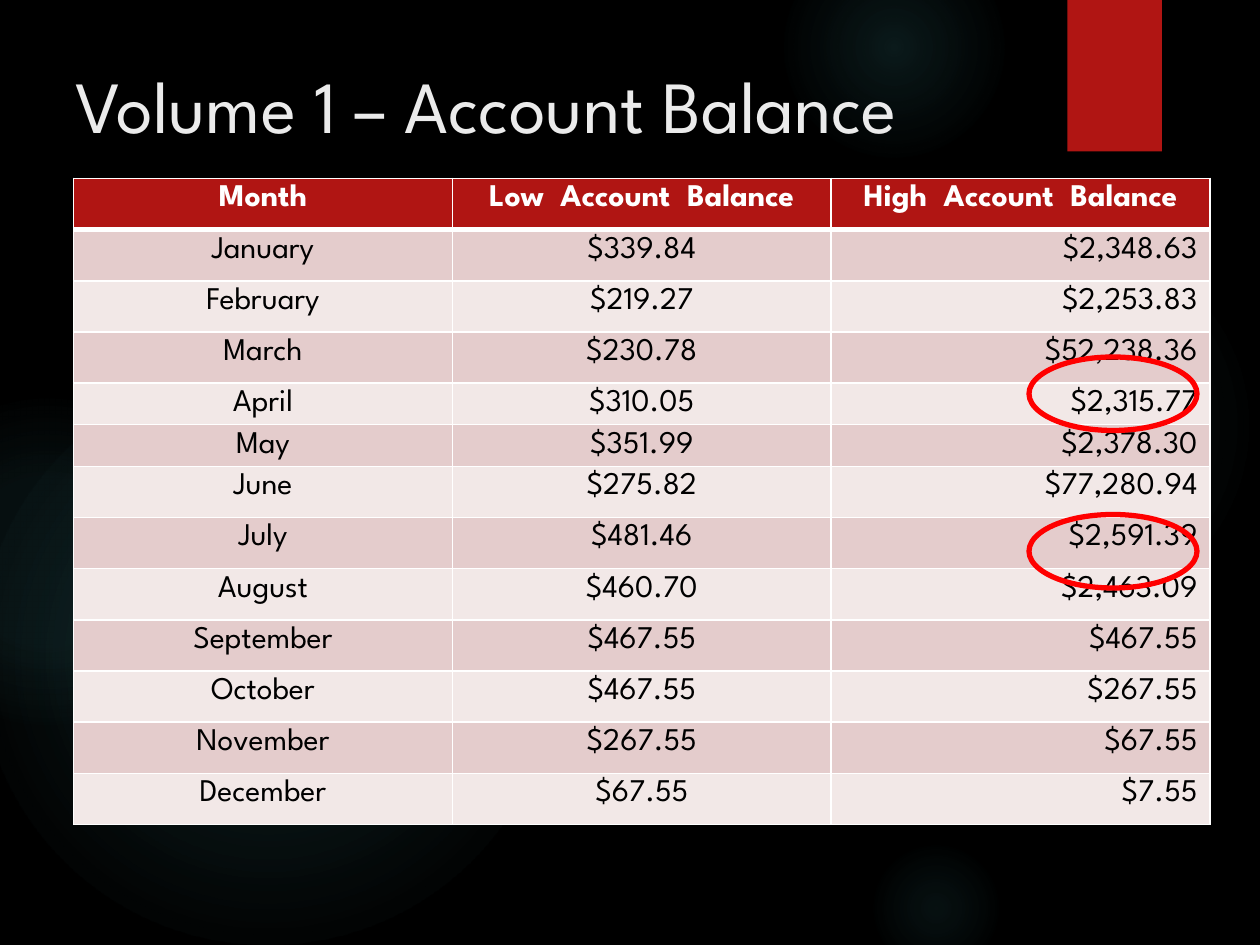
from lxml import etree
from pptx import Presentation
from pptx.dml.color import RGBColor
from pptx.enum import shapes, text
from pptx.oxml import ns
from pptx.util import Pt

FONT = "League Spartan"
COLORS = {
    "background": "000000", "glow": "50B9C1", "accent": "B01513",
    "title": "EBEBEB", "white": "FFFFFF", "body": "000000",
    "band_dark": "E4CCCC", "band_light": "F2E8E7", "marker": "FF0000",
}
GLOWS = [
    ((496, 132, 222, 222), [(0, 7), (36, 6), (69, 0)]),
    ((448, -36, 126, 126), [(0, 14), (36, 7), (73, 0)]),
    ((496, 480, 78, 78), [(0, 9), (36, 5), (66, 0)]),
    ((-12, 210, 330, 330), [(0, 11), (36, 10), (75, 0)]),
    ((-66, 228, 186, 186), [(0, 8), (36, 8), (72, 0)]),
]
BALANCES = [
    ("Month", "Low  Account  Balance", "High  Account  Balance"),
    ("January", "$339.84", "$2,348.63"),
    ("February", "$219.27", "$2,253.83"),
    ("March", "$230.78", "$52,238.36"),
    ("April", "$310.05", "$2,315.77"),
    ("May", "$351.99", "$2,378.30"),
    ("June", "$275.82", "$77,280.94"),
    ("July", "$481.46", "$2,591.39"),
    ("August", "$460.70", "$2,463.09"),
    ("September", "$467.55", "$467.55"),
    ("October", "$467.55", "$267.55"),
    ("November", "$267.55", "$67.55"),
    ("December", "$67.55", "$7.55"),
]
ROW_HEIGHT, SHORT_ROW_HEIGHT = 29.25, 23.75
SHORT_MONTHS = {"April", "May"}


def rgb(name):
    return RGBColor.from_string(COLORS[name])


def add_element(parent, tag, **attributes):
    values = {key: str(value) for key, value in attributes.items()}
    return etree.SubElement(parent, ns.qn(tag), values)


def add_plain_shape(slide, kind, box):
    shape = slide.shapes.add_shape(kind, *(Pt(value) for value in box))
    shape.shadow.inherit = False
    shape.line.fill.background()
    return shape


def format_run(run, size, color, bold=False):
    run.font.name = FONT
    run.font.size = Pt(size)
    run.font.bold = bold
    run.font.color.rgb = rgb(color)


def add_glow(slide, box, stops):
    glow = add_plain_shape(slide, shapes.MSO_SHAPE.OVAL, box)
    glow.fill.gradient()
    gradient = glow.fill._xPr.find(ns.qn("a:gradFill"))
    for child in list(gradient):
        gradient.remove(child)
    stop_list = add_element(gradient, "a:gsLst")
    for position, opacity in stops:
        stop = add_element(stop_list, "a:gs", pos=position * 1000)
        color = add_element(stop, "a:srgbClr", val=COLORS["glow"])
        add_element(color, "a:alpha", val=opacity * 1000)
    circle = add_element(gradient, "a:path", path="circle")
    add_element(circle, "a:fillToRect", l=50000, t=50000, r=50000, b=50000)


def add_backdrop(slide):
    slide.background.fill.solid()
    slide.background.fill.fore_color.rgb = rgb("background")
    for box, stops in GLOWS:
        add_glow(slide, box, stops)
    ribbon = add_plain_shape(slide, shapes.MSO_SHAPE.RECTANGLE, (610, 0, 54, 86.5))
    ribbon.fill.solid()
    ribbon.fill.fore_color.rgb = rgb("accent")


def place_title(slide, box, wording):
    title = slide.shapes.title
    title.left, title.top, title.width, title.height = (Pt(value) for value in box)
    frame = title.text_frame
    frame.text = wording
    frame.auto_size = text.MSO_AUTO_SIZE.NONE
    frame.vertical_anchor = text.MSO_ANCHOR.TOP
    frame.margin_top = Pt(16.5)
    paragraph = frame.paragraphs[0]
    paragraph.alignment = text.PP_ALIGN.LEFT
    format_run(paragraph.runs[0], 42, "title")
    slide.shapes._spTree.append(title._element)


def add_borders(cell, widths):
    properties = cell._tc.get_or_add_tcPr()
    for side, width in widths.items():
        line = add_element(properties, f"a:ln{side}", w=Pt(width))
        fill = add_element(line, "a:solidFill")
        add_element(fill, "a:srgbClr", val=COLORS["white"])


def format_cell(cell, wording, row, column):
    header = row == 0
    add_borders(cell, {"L": 1, "R": 1, "T": 3 if row == 1 else 1, "B": 3 if header else 1})
    cell.fill.solid()
    band = "band_dark" if row % 2 else "band_light"
    cell.fill.fore_color.rgb = rgb("accent" if header else band)
    cell.text_frame.text = wording
    paragraph = cell.text_frame.paragraphs[0]
    right = column == 2 and not header
    paragraph.alignment = text.PP_ALIGN.RIGHT if right else text.PP_ALIGN.CENTER
    format_run(paragraph.runs[0], 18, "white" if header else "body", header)


def add_balance_table(slide, left, top, width):
    heights = [SHORT_ROW_HEIGHT if month in SHORT_MONTHS else ROW_HEIGHT
               for month, _, _ in BALANCES]
    table = slide.shapes.add_table(
        len(BALANCES), 3, Pt(left), Pt(top), Pt(width), Pt(sum(heights))).table
    for column in table.columns:
        column.width = Pt(width / 3)
    for row, (values, height) in enumerate(zip(BALANCES, heights)):
        table.rows[row].height = Pt(height)
        for column, wording in enumerate(values):
            format_cell(table.cell(row, column), wording, row, column)


def add_marker(slide, box):
    marker = add_plain_shape(slide, shapes.MSO_SHAPE.OVAL, box)
    marker.fill.background()
    marker.line.color.rgb = rgb("marker")
    marker.line.width = Pt(3)


def main():
    presentation = Presentation()
    presentation.slide_width, presentation.slide_height = Pt(720), Pt(540)
    slide = presentation.slides.add_slide(presentation.slide_layouts[5])
    add_backdrop(slide)
    place_title(slide, (36, 18, 648, 90), "Volume 1 – Account Balance")
    add_balance_table(slide, 42, 102, 649.5)
    for top in (204, 294):
        add_marker(slide, (588, top, 96, 42))
    presentation.save("out.pptx")


if __name__ == "__main__":
    main()
